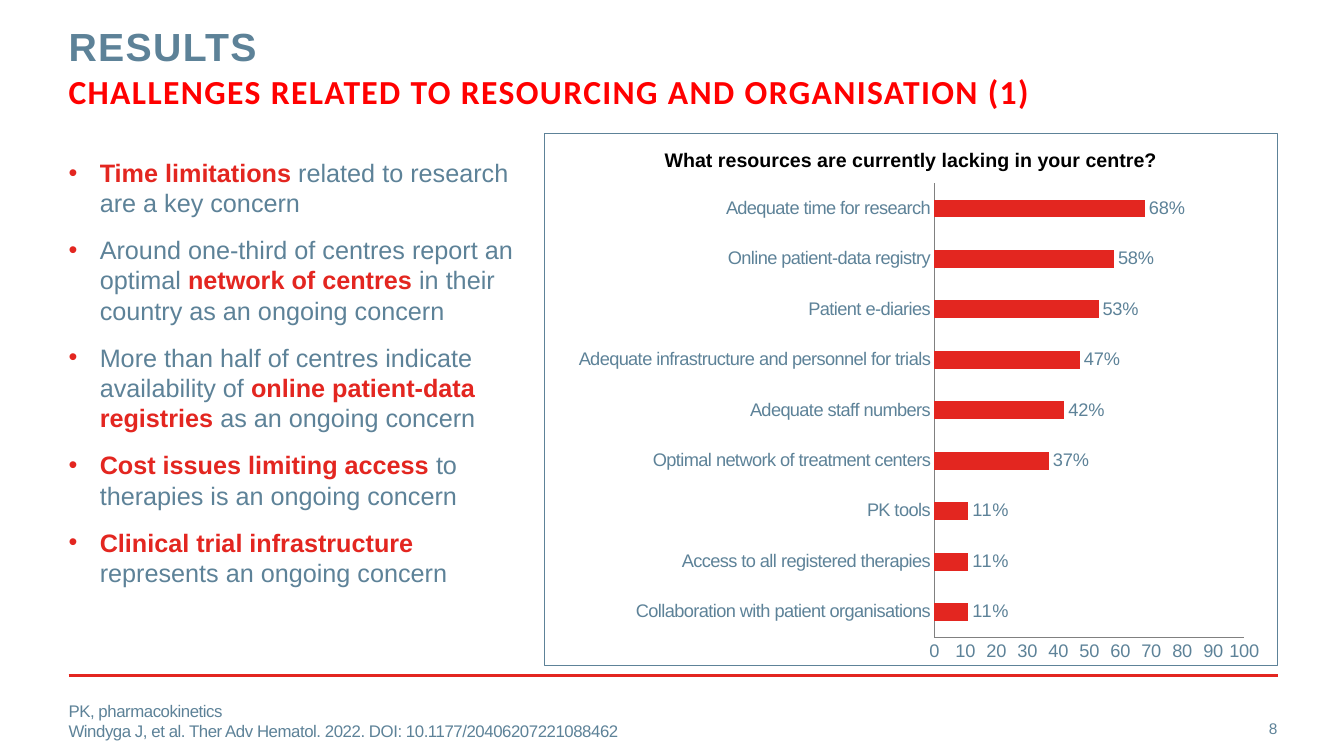
from lxml import etree
from pptx import Presentation
from pptx.chart.data import CategoryChartData
from pptx.dml.color import RGBColor
from pptx.enum.chart import XL_CHART_TYPE as ChartType, XL_LABEL_POSITION as LabelPosition
from pptx.enum.chart import XL_TICK_MARK as TickMark
from pptx.enum.shapes import MSO_CONNECTOR as Connector, MSO_SHAPE as Shape
from pptx.enum.text import MSO_ANCHOR as Anchor, MSO_AUTO_SIZE as AutoSize, PP_ALIGN as Align
from pptx.oxml import parse_xml
from pptx.oxml.ns import nsdecls, qn
from pptx.util import Inches, Pt

COLORS = {"slate": "5D8298", "red": "E32620", "title_red": "FF0000",
          "black": "000000", "axis": "808080"}
LEFT, RIGHT = 0.68, 12.68

# Each bullet is a list of (text, is_key_phrase) runs.
BULLETS = [
    [("Time limitations ", True), ("related to research are a key concern", False)],
    [("Around one-third of centres report an optimal ", False),
     ("network of centres", True), (" in their country as an ongoing concern", False)],
    [("More than half of centres indicate availability of ", False),
     ("online patient-data registries ", True), ("as an ongoing concern", False)],
    [("Cost issues limiting access ", True), ("to therapies is an ongoing concern", False)],
    [("Clinical trial infrastructure ", True), ("represents an ongoing concern", False)],
]
# Listed from the bottom bar to the top bar.
LACKING = {
    "Collaboration with patient organisations": 11,
    "Access to all registered therapies": 11,
    "PK tools": 11,
    "Optimal network of treatment centers": 37,
    "Adequate staff numbers": 42,
    "Adequate infrastructure and personnel for trials": 47,
    "Patient e-diaries": 53,
    "Online patient-data registry": 58,
    "Adequate time for research": 68,
}
FOOTNOTES = ["PK, pharmacokinetics",
             "Windyga J, et al. Ther Adv Hematol. 2022. DOI: 10.1177/20406207221088462"]


def rgb(name):
    return RGBColor.from_string(COLORS[name])


def set_font(font, size, color="slate", bold=False, name="Arial"):
    for key, value in {"size": Pt(size), "bold": bold, "name": name}.items():
        setattr(font, key, value)
    font.color.rgb = rgb(color)


def add_run(paragraph, text, size, color="slate", bold=False, name="Arial", tracking=0):
    run = paragraph.add_run()
    run.text = text
    set_font(run.font, size, color, bold, name)
    if tracking:
        run.font._element.set("spc", str(tracking))


def place(shape, box):
    for key, value in zip(("left", "top", "width", "height"), box):
        setattr(shape, key, Inches(value))


def prepare_frame(shape, anchor=Anchor.TOP):
    frame = shape.text_frame
    settings = {"margin_left": 0, "margin_top": 0, "margin_right": 0, "margin_bottom": 0,
                "word_wrap": True, "auto_size": AutoSize.NONE, "vertical_anchor": anchor}
    for key, value in settings.items():
        setattr(frame, key, value)
    return frame


def add_text_box(slide, box, anchor=Anchor.MIDDLE):
    return prepare_frame(slide.shapes.add_textbox(*map(Inches, box)), anchor)


def fill_title(slide, box):
    title = slide.shapes.title
    place(title, box)
    paragraph = prepare_frame(title).paragraphs[0]
    paragraph.alignment = Align.LEFT
    paragraph.line_spacing = Pt(30)
    add_run(paragraph, "RESULTS", 28, bold=True, tracking=100)
    paragraph.add_line_break()
    add_run(paragraph, "CHALLENGES RELATED TO RESOURCING AND ORGANISATION (1)", 24,
            "title_red", True, "Calibri", 100)


def add_bullet(paragraph):
    properties = paragraph._p.get_or_add_pPr()
    indent = Inches(0.31)
    properties.set("marL", str(indent))
    properties.set("indent", str(-indent))
    color = etree.SubElement(properties, qn("a:buClr"))
    etree.SubElement(color, qn("a:srgbClr"), val=COLORS["red"])
    etree.SubElement(properties, qn("a:buFont"), typeface="Arial")
    etree.SubElement(properties, qn("a:buChar"), char="•")


def fill_bullets(slide, box):
    body = slide.placeholders[1]
    place(body, box)
    frame = prepare_frame(body)
    for index, runs in enumerate(BULLETS):
        paragraph = frame.add_paragraph() if index else frame.paragraphs[0]
        add_bullet(paragraph)
        paragraph.space_before = Pt(6 if index else 0)
        paragraph.space_after = Pt(6)
        for text, is_key in runs:
            add_run(paragraph, text, 18, "red" if is_key else "slate", is_key)


def format_axis(axis):
    axis.has_major_gridlines = False
    axis.major_tick_mark = axis.minor_tick_mark = TickMark.NONE
    axis.format.line.color.rgb = rgb("axis")
    axis.format.line.width = Pt(0.5)
    set_font(axis.tick_labels.font, 13)


def set_plot_layout(chart, x, y, width, height):
    """Fix the inner plot area, in fractions of the chart."""
    sizes = "".join(f'<c:{tag} val="{value}"/>'
                    for tag, value in zip("xywh", (x, y, width, height)))
    layout = parse_xml(
        f'<c:layout {nsdecls("c")}><c:manualLayout><c:layoutTarget val="inner"/>'
        f'<c:xMode val="edge"/><c:yMode val="edge"/>{sizes}</c:manualLayout></c:layout>')
    plot_area = chart._chartSpace.chart.plotArea
    for old in plot_area.findall(qn("c:layout")):
        plot_area.remove(old)
    plot_area.insert(0, layout)


def add_resource_chart(slide, box):
    data = CategoryChartData()
    data.categories = list(LACKING)
    data.add_series("Series 1", list(LACKING.values()))
    chart = slide.shapes.add_chart(ChartType.BAR_CLUSTERED, *map(Inches, box), data).chart
    chart.has_legend = chart.has_title = False
    set_font(chart.font, 13)
    for axis in (chart.category_axis, chart.value_axis):
        format_axis(axis)
    chart.category_axis._element.find(".//" + qn("a:defRPr")).set("spc", "-30")
    value_axis = chart.value_axis
    value_axis.minimum_scale, value_axis.maximum_scale, value_axis.major_unit = 0, 100, 10

    plot = chart.plots[0]
    plot.gap_width = 182
    plot.vary_by_categories = False
    bars = plot.series[0].format.fill
    bars.solid()
    bars.fore_color.rgb = rgb("red")
    plot.has_data_labels = True
    labels = plot.data_labels
    labels.show_value = True
    labels.number_format, labels.number_format_is_linked = '0"%"', False
    labels.position = LabelPosition.OUTSIDE_END
    set_font(labels.font, 13)
    set_plot_layout(chart, 0.535, 0.02, 0.425, 0.91)


def add_chart_panel(slide, left, top, width, height):
    panel = slide.shapes.add_shape(Shape.RECTANGLE, *map(Inches, (left, top, width, height)))
    panel.shadow.inherit = False
    panel.fill.background()
    panel.line.color.rgb = rgb("slate")
    panel.line.width = Pt(0.75)
    add_resource_chart(slide, (left, top + 0.4, width - 0.04, height - 0.33))
    heading = add_text_box(slide, (left, top + 0.09, width, 0.34)).paragraphs[0]
    heading.alignment = Align.CENTER
    add_run(heading, "What resources are currently lacking in your centre?", 14, "black", True)


def add_footer(slide, top):
    rule = slide.shapes.add_connector(Connector.STRAIGHT, Inches(LEFT), Inches(top),
                                      Inches(RIGHT), Inches(top))
    rule.line.color.rgb = rgb("red")
    rule.line.width = Pt(2)
    etree.SubElement(rule._element.spPr, qn("a:effectLst"))
    notes = add_text_box(slide, (LEFT, top + 0.25, 11.13, 0.4))
    for index, text in enumerate(FOOTNOTES):
        paragraph = notes.add_paragraph() if index else notes.paragraphs[0]
        add_run(paragraph, text, 12, tracking=-30)
    number = add_text_box(slide, (RIGHT - 0.87, top + 0.33, 0.86, 0.4)).paragraphs[0]
    number.alignment = Align.RIGHT
    add_run(number, "8", 11)


def main():
    presentation = Presentation()
    presentation.slide_width, presentation.slide_height = Inches(13.33), Inches(7.5)
    slide = presentation.slides.add_slide(presentation.slide_layouts[1])
    fill_title(slide, (LEFT, 0.27, 9.56, 0.88))
    fill_bullets(slide, (LEFT, 1.56, 4.54, 4.95))
    add_chart_panel(slide, 5.4, 1.32, 7.27, 5.28)
    add_footer(slide, 6.7)
    presentation.save("out.pptx")


if __name__ == "__main__":
    main()
